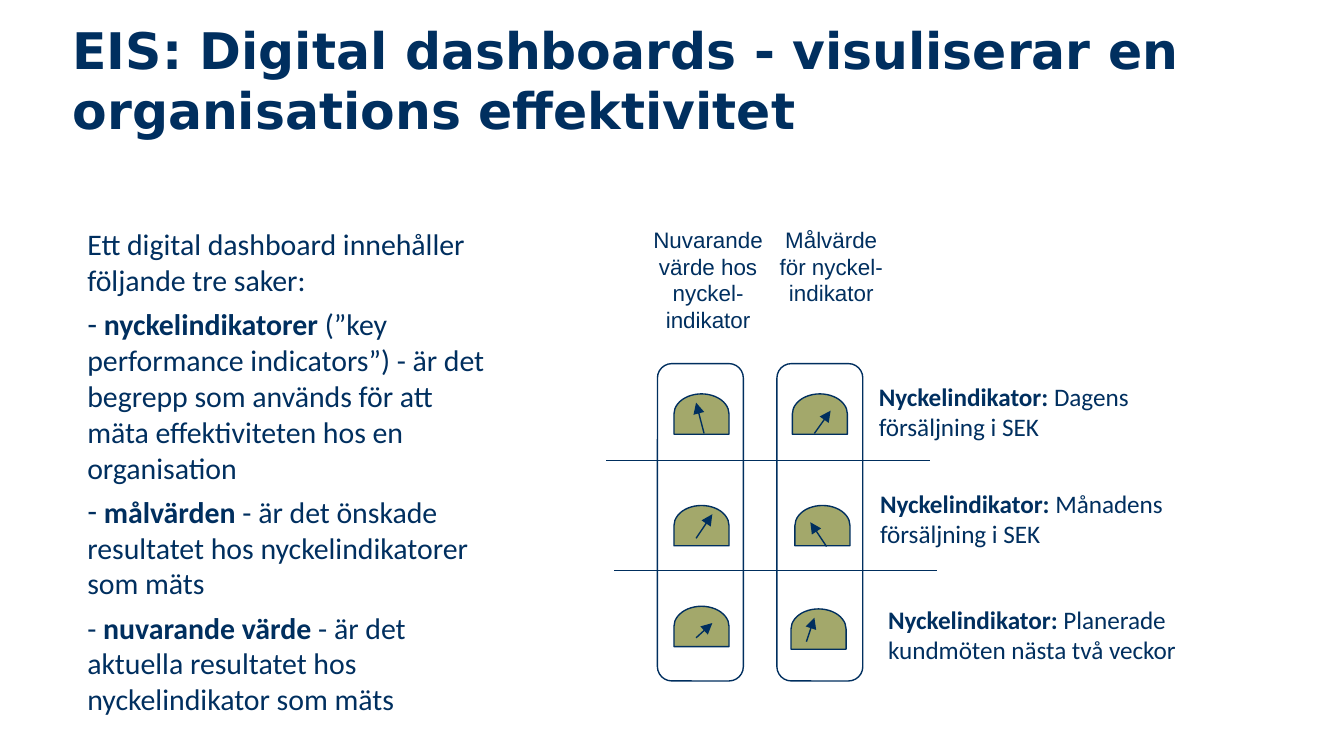
from dataclasses import dataclass

from lxml import etree
from pptx import Presentation
from pptx.dml.color import RGBColor
from pptx.enum.shapes import MSO_CONNECTOR, MSO_SHAPE
from pptx.enum.text import MSO_ANCHOR, MSO_AUTO_SIZE, PP_ALIGN
from pptx.oxml.ns import qn
from pptx.util import Pt

STRAIGHT = MSO_CONNECTOR.STRAIGHT
PANEL = MSO_SHAPE.ROUNDED_RECTANGLE
GAUGE = MSO_SHAPE.FLOWCHART_DELAY
LEFT, CENTER = PP_ALIGN.LEFT, PP_ALIGN.CENTER
TOP, MIDDLE = MSO_ANCHOR.TOP, MSO_ANCHOR.MIDDLE


@dataclass(frozen=True)
class Theme:
    ink: RGBColor = RGBColor(0x00, 0x2F, 0x5F)
    divider: RGBColor = RGBColor(0x00, 0x2E, 0x5D)
    gauge: RGBColor = RGBColor(0xA3, 0xA8, 0x6B)
    paper: RGBColor = RGBColor(0xFF, 0xFF, 0xFF)
    title_font: str = "DejaVu Sans"
    body_font: str = "Calibri"
    caption_font: str = "Arial"
    title_size: float = 27
    body_size: float = 16
    label_size: float = 13.5
    caption_size: float = 12
    line_width: float = 0.75


THEME = Theme()

TITLE = "EIS: Digital dashboards - visuliserar en organisations effektivitet"
# Each paragraph: bullet character or None, then (text, bold) runs
BODY = [
    (None, [("Ett digital dashboard innehåller följande tre saker:", False)]),
    ("-", [(" ", False), ("nyckelindikatorer ", True),
           ("(”key performance indicators”) - är det begrepp som används "
            "för att mäta effektiviteten hos en organisation", False)]),
    ("-", [(" ", False), ("målvärden", True),
           (" - är det önskade resultatet hos nyckelindikatorer som mäts", False)]),
    (None, [("- ", False), ("nuvarande värde ", True),
            ("- är det aktuella resultatet hos nyckelindikator som mäts", False)]),
]

# Dashboard parts, in points from the dashboard's top left corner
PANEL_CENTERS = [51.2, 115.2]
PANEL_MIDDLE, PANEL_LENGTH, PANEL_WIDTH = 162.4, 170, 46
GAUGE_HEIGHT, GAUGE_WIDTH = 21.6, 29.5
# Centre of each gauge, then needle foot and tip measured from that centre
GAUGES = [
    ((51.8, 104.4), (1.4, 10.4), (-2.9, -6.1)),
    ((115.2, 104.4), (-2.9, 10.4), (5.8, -1.8)),
    ((51.8, 164.2), (-2.9, 6.8), (5.8, -6.1)),
    ((116.6, 164.2), (2.2, 11.2), (-6.5, -1.8)),
    ((51.8, 218.2), (-2.9, 6.1), (5.8, -1.8)),
    ((114.5, 219.6), (-6.5, 6.8), (-2.2, -6.1)),
]
DIVIDERS = [(0.7, 174.2, 129.2), (5, 177.8, 188.3)]
CAPTIONS = [
    ("Målvärde för nyckel- indikator", 82.1, 78.5, 51),
    ("Nuvarande värde hos nyckel-indikator", 8.6, 93.6, 65.5),
]
INDICATORS = [
    ("Dagens försäljning i SEK", 139.7, 83.2),
    ("Månadens försäljning i SEK", 140.4, 140.8),
    ("Planerade kundmöten nästa två veckor", 144.7, 202.7),
]


def place(shape, left, top, width, height):
    shape.left, shape.top = Pt(left), Pt(top)
    shape.width, shape.height = Pt(width), Pt(height)


def style(paragraph, font_name, size, bold=None, align=LEFT):
    paragraph.alignment = align
    font = paragraph.font
    font.name, font.size, font.bold = font_name, Pt(size), bold
    font.color.rgb = THEME.ink


def add_runs(paragraph, runs):
    for text, bold in runs:
        run = paragraph.add_run()
        run.text = text
        run.font.bold = bold


def set_bullet(paragraph, character):
    properties = paragraph._p.get_or_add_pPr()
    properties.set("marL", "0")
    properties.set("indent", "0")
    if character:
        etree.SubElement(properties, qn("a:buChar"), char=character)
    else:
        etree.SubElement(properties, qn("a:buNone"))


def add_line(slide, start, end, color, arrow=False):
    line = slide.shapes.add_connector(
        STRAIGHT, *(Pt(value) for value in (*start, *end)))
    line.line.color.rgb = color
    line.line.width = Pt(THEME.line_width)
    if arrow:
        etree.SubElement(line.line._get_or_add_ln(), qn("a:tailEnd"), type="triangle")
    etree.SubElement(line._element.spPr, qn("a:effectLst"))


def add_upright(slide, kind, center, length, breadth, fill):
    """Add a shape turned a quarter left, so its length runs upwards."""
    x, y = center
    shape = slide.shapes.add_shape(
        kind, Pt(x - length / 2), Pt(y - breadth / 2), Pt(length), Pt(breadth))
    shape.rotation = 270
    shape.shadow.inherit = False
    shape.fill.solid()
    shape.fill.fore_color.rgb = fill
    shape.line.color.rgb = THEME.ink
    shape.line.width = Pt(THEME.line_width)


def add_text(slide, left, top, width, height):
    """Add a wrapping text box and return its first paragraph."""
    box = slide.shapes.add_textbox(Pt(left), Pt(top), Pt(width), Pt(height))
    box.text_frame.word_wrap = True
    return box.text_frame.paragraphs[0]


def fill_title(slide, left, top, width, height):
    title = slide.shapes.title
    place(title, left, top, width, height)
    frame = title.text_frame
    frame.text = TITLE
    frame.auto_size = MSO_AUTO_SIZE.NONE
    frame.vertical_anchor = MIDDLE
    style(frame.paragraphs[0], THEME.title_font, THEME.title_size, bold=True)


def fill_body(slide, left, top, width, height):
    body = slide.placeholders[1]
    place(body, left, top, width, height)
    frame = body.text_frame
    frame.auto_size = MSO_AUTO_SIZE.NONE
    frame.vertical_anchor = TOP
    for index, (bullet, runs) in enumerate(BODY):
        paragraph = frame.add_paragraph() if index else frame.paragraphs[0]
        set_bullet(paragraph, bullet)
        paragraph.space_before, paragraph.space_after = Pt(0), Pt(4.5)
        style(paragraph, THEME.body_font, THEME.body_size)
        add_runs(paragraph, runs)


def add_dashboard(slide, left, top):
    for x in PANEL_CENTERS:
        add_upright(slide, PANEL, (left + x, top + PANEL_MIDDLE),
                    PANEL_LENGTH, PANEL_WIDTH, THEME.paper)
    for (x, y), foot, tip in GAUGES:
        center_x, center_y = left + x, top + y
        add_upright(slide, GAUGE, (center_x, center_y),
                    GAUGE_HEIGHT, GAUGE_WIDTH, THEME.gauge)
        add_line(slide, (center_x + foot[0], center_y + foot[1]),
                 (center_x + tip[0], center_y + tip[1]), THEME.ink, arrow=True)
    for start, end, y in DIVIDERS:
        add_line(slide, (left + start, top + y), (left + end, top + y), THEME.divider)
    for text, x, width, height in CAPTIONS:
        caption = add_text(slide, left + x, top, width, height)
        caption.text = text
        style(caption, THEME.caption_font, THEME.caption_size, align=CENTER)
    for text, x, y in INDICATORS:
        indicator = add_text(slide, left + x, top + y, 193, 40.3)
        style(indicator, THEME.body_font, THEME.label_size)
        add_runs(indicator, [("Nyckelindikator: ", True), (text, False)])


def main():
    deck = Presentation()
    deck.slide_width, deck.slide_height = Pt(720), Pt(405)
    slide = deck.slides.add_slide(deck.slide_layouts[1])
    fill_title(slide, 31.7, 8.6, 695, 67.7)
    fill_body(slide, 39.6, 117.4, 235.4, 297.4)
    add_dashboard(slide, 324, 117.4)
    deck.save("out.pptx")


if __name__ == "__main__":
    main()
